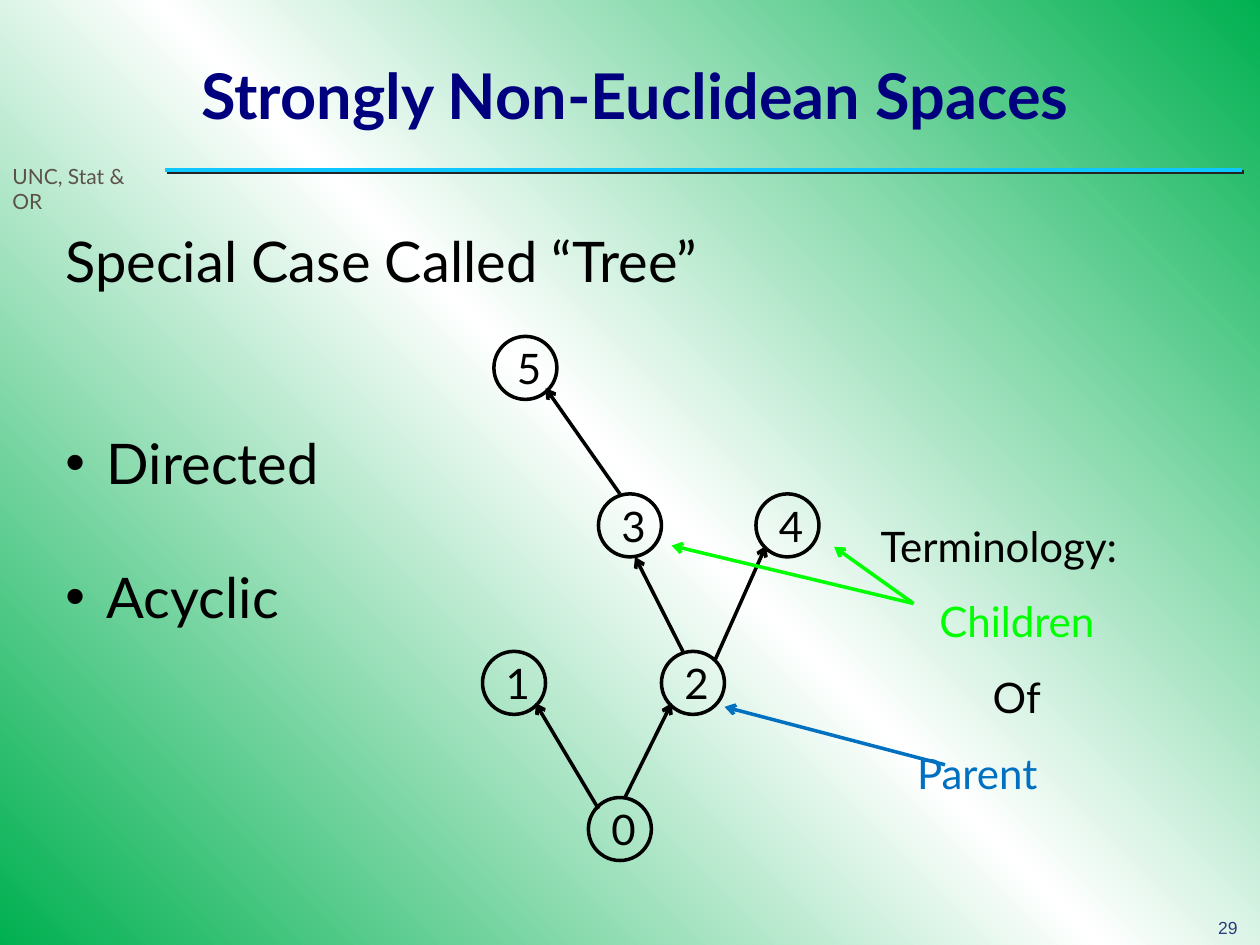
from copy import deepcopy

from lxml import etree
from pptx import Presentation
from pptx.dml.color import RGBColor
from pptx.enum.shapes import MSO_CONNECTOR, MSO_SHAPE
from pptx.enum.text import MSO_ANCHOR, PP_ALIGN
from pptx.oxml.ns import qn
from pptx.util import Inches, Pt

STRAIGHT = MSO_CONNECTOR.STRAIGHT
ELLIPSE = MSO_SHAPE.OVAL
MIDDLE = MSO_ANCHOR.MIDDLE
LEFT, CENTER = PP_ALIGN.LEFT, PP_ALIGN.CENTER

COLORS = {
    "green": "00B050", "white": "FFFFFF", "title": "00007F", "rule": "0FC7FF",
    "rule_shadow": "232323", "number": "2A3D7A", "affiliation": "5B5249",
    "black": "000000", "children": "00FF00", "parent": "0070C0",
}
BACKGROUND_STOPS = [(0, "green"), (0.5, "white"), (1, "green")]

TITLE = "Strongly Non-Euclidean Spaces"
AFFILIATION = "UNC, Stat & OR"
PAGE_NUMBER = "29"
HEADING = "Special Case Called “Tree”"
PROPERTIES = [("Directed", 77), ("Acyclic", 38)]
TERMINOLOGY = [
    ("Terminology:", "black", LEFT, 0),
    ("Children", "children", CENTER, 0),
    ("Of", "black", CENTER, 0),
    ("Parent", "parent", LEFT, 0.29),
]

NODE_SIZE = 0.5
NODES = {
    "0": (4.67, 6.33), "4": (6, 3.92), "1": (3.83, 5.17),
    "3": (4.75, 3.92), "2": (5.25, 5.17), "5": (3.92, 2.67),
}
ARROWS = [
    ((4.75, 6.42), (4.25, 5.58), "black"),
    ((4.92, 3.92), (4.33, 3.08), "black"),
    ((5.67, 5.25), (6.08, 4.33), "black"),
    ((5.42, 5.17), (5.04, 4.42), "black"),
    ((4.96, 6.33), (5.33, 5.58), "black"),
    ((7.25, 4.79), (5.33, 4.33), "children"),
    ((7.25, 4.79), (6.62, 4.34), "children"),
    ((7.5, 6.07), (5.75, 5.61), "parent"),
]


def rgb(color):
    return RGBColor.from_string(COLORS[color])


def style(paragraph, size, color, font="Lato", bold=False):
    paragraph.font.size = Pt(size)
    paragraph.font.name = font
    paragraph.font.bold = bold
    paragraph.font.color.rgb = rgb(color)


def add_text(slide, box, text, size, color, font="Lato", bold=False):
    frame = slide.shapes.add_textbox(*map(Inches, box)).text_frame
    frame.word_wrap = True
    frame.text = text
    style(frame.paragraphs[0], size, color, font, bold)
    return frame


def add_line(slide, start, end, color, width):
    line = slide.shapes.add_connector(STRAIGHT, *map(Inches, start + end))
    line.line.color.rgb = rgb(color)
    line.line.width = Pt(width)
    effects = etree.SubElement(line._element.spPr, qn("a:effectLst"))
    return line, effects


def add_rule(slide):
    effects = add_line(slide, (1.31, 1.35), (9.86, 1.35), "rule", 2.25)[1]
    shadow = etree.SubElement(effects, qn("a:outerShdw"),
                              dist=str(Pt(1.4)), dir=str(45 * 60000))
    etree.SubElement(shadow, qn("a:srgbClr"), val=COLORS["rule_shadow"])


def add_arrow(slide, start, end, color):
    arrow = add_line(slide, start, end, color, 2)[0]
    etree.SubElement(arrow.line._get_or_add_ln(), qn("a:tailEnd"), type="arrow")


def add_node(slide, label, position):
    node = slide.shapes.add_shape(
        ELLIPSE, *map(Inches, position + (NODE_SIZE, NODE_SIZE)))
    node.shadow.inherit = False
    node.fill.background()
    node.line.color.rgb = rgb("black")
    node.line.width = Pt(2)
    frame = node.text_frame
    frame.margin_left = Inches(0.11)
    frame.margin_right = frame.margin_top = frame.margin_bottom = 0
    frame.vertical_anchor = MIDDLE
    frame.text = label
    frame.paragraphs[0].alignment = LEFT
    style(frame.paragraphs[0], 24, "black")


def add_properties(frame):
    for name, gap in PROPERTIES:
        paragraph = frame.add_paragraph()
        paragraph.text = name
        paragraph.space_before = Pt(gap)
        properties = paragraph._p.get_or_add_pPr()
        properties.set("marL", str(Inches(0.33)))
        properties.set("indent", str(-Inches(0.33)))
        etree.SubElement(properties, qn("a:buFont"), typeface="Arial")
        etree.SubElement(properties, qn("a:buChar"), char="•")
        style(paragraph, 32, "black")


def add_terminology(slide):
    frame = slide.shapes.add_textbox(
        *map(Inches, (6.89, 3.88, 2.36, 2.52))).text_frame
    frame.word_wrap = True
    for index, (term, color, alignment, indent) in enumerate(TERMINOLOGY):
        paragraph = frame.add_paragraph() if index else frame.paragraphs[0]
        paragraph.text = term
        paragraph.alignment = alignment
        paragraph.line_spacing = 1.5
        paragraph._p.get_or_add_pPr().set("marL", str(Inches(indent)))
        style(paragraph, 24, color)


def paint_background(slide):
    fill = slide.background.fill
    fill.gradient()
    fill.gradient_angle = 225
    stop_list = slide._element.find(".//" + qn("a:gsLst"))
    stop_list.append(deepcopy(stop_list[0]))
    for stop, (position, color) in zip(fill.gradient_stops, BACKGROUND_STOPS):
        stop.position = position
        stop.color.rgb = rgb(color)


def main():
    deck = Presentation()
    deck.slide_width, deck.slide_height = Inches(10), Inches(7.5)
    slide = deck.slides.add_slide(deck.slide_layouts[6])
    paint_background(slide)
    add_rule(slide)
    number = add_text(slide, (9.57, 7.25, 0.37, 0.25), PAGE_NUMBER, 10,
                      "number", "Arial")
    number.paragraphs[0].line_spacing = 0.9
    add_text(slide, (0, 1.25, 1.35, 0.3), AFFILIATION, 12, "affiliation")
    title = add_text(slide, (1.5, 0.33, 8.17, 0.83), TITLE, 36, "title", bold=True)
    title.vertical_anchor = MIDDLE
    body = add_text(slide, (0.42, 1.75, 5.67, 3.33), HEADING, 32, "black")
    add_properties(body)
    for label, position in NODES.items():
        add_node(slide, label, position)
    add_terminology(slide)
    for start, end, color in ARROWS:
        add_arrow(slide, start, end, color)
    deck.save("out.pptx")


if __name__ == "__main__":
    main()
